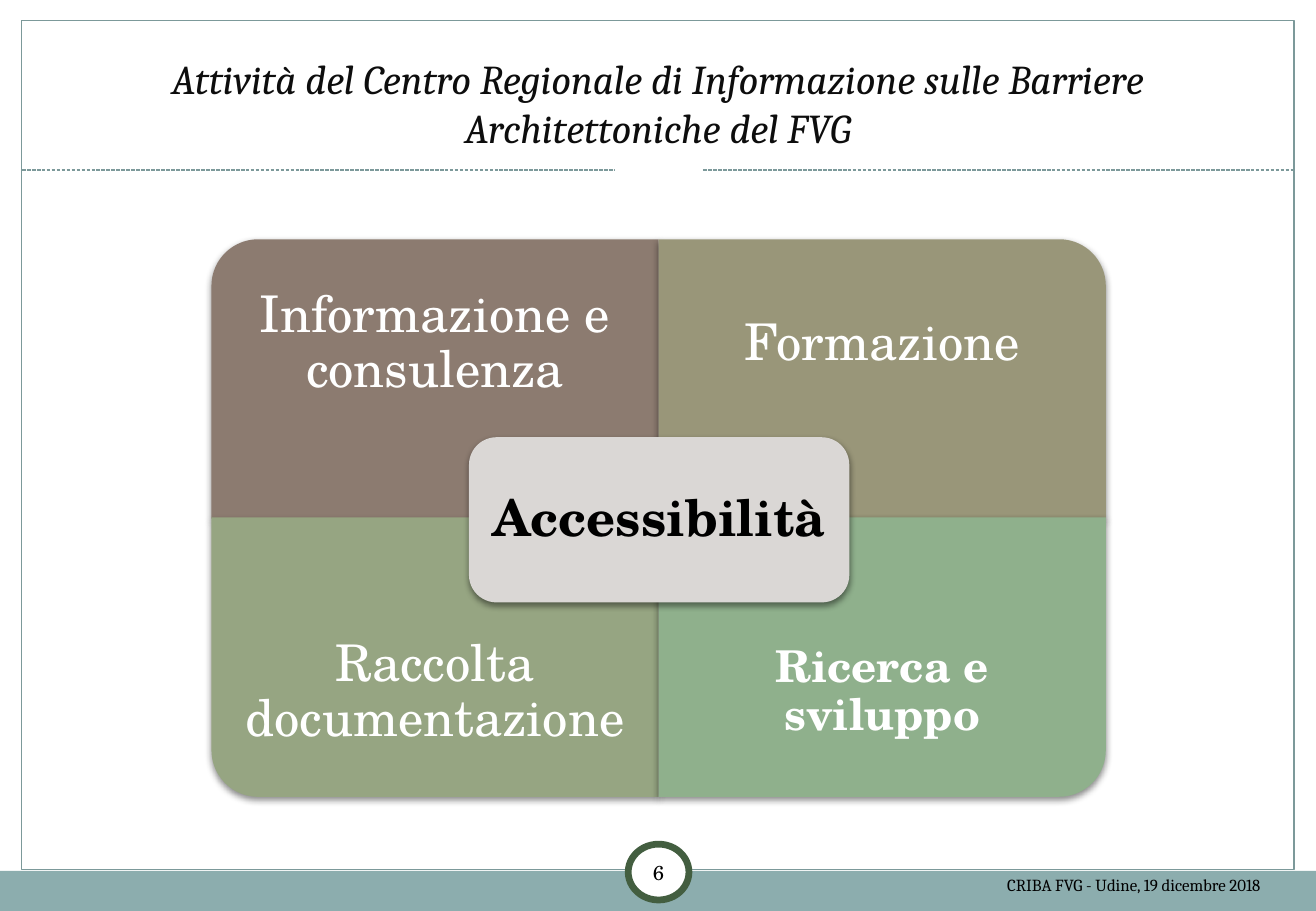
from lxml import etree
from pptx import Presentation
from pptx.dml.color import RGBColor
from pptx.enum.dml import MSO_LINE
from pptx.enum.shapes import MSO_CONNECTOR, MSO_SHAPE
from pptx.enum.text import MSO_ANCHOR, PP_ALIGN
from pptx.oxml import parse_xml
from pptx.oxml.ns import nsdecls, qn
from pptx.util import Pt

PX = 9144  # 100 px to the inch
RECT, OVAL = MSO_SHAPE.RECTANGLE, MSO_SHAPE.OVAL
ROUNDED, ONE_CORNER = MSO_SHAPE.ROUNDED_RECTANGLE, MSO_SHAPE.ROUND_1_RECTANGLE
LEFT_TO_RIGHT = MSO_CONNECTOR.STRAIGHT
DASH = MSO_LINE.SQUARE_DOT
MIDDLE, BOTTOM = MSO_ANCHOR.MIDDLE, MSO_ANCHOR.BOTTOM
CENTER, RIGHT = PP_ALIGN.CENTER, PP_ALIGN.RIGHT

THEME = {
    "white": "FFFFFF", "black": "000000", "title": "0D0D0D",
    "band": "8CADAE", "frame": "7C999A", "badge": "435E40",
    "brown": "8C7B70", "olive": "999679", "moss": "96A582", "green": "8FB08C",
    "center": "DAD7D5",
    "serif": "Cambria", "school": "TeX Gyre Schola",
    "title_size": 24.3, "large": 30, "medium": 26, "number": 12, "footer": 10,
}


def color(name):
    return RGBColor.from_string(THEME[name])


def add_panel(kind, box, fill=None, line=None, width=0.75, shadow=False):
    shape = slide.shapes.add_shape(kind, *(value * PX for value in box))
    shape.shadow.inherit = False
    if fill:
        shape.fill.solid()
        shape.fill.fore_color.rgb = color(fill)
    else:
        shape.fill.background()
    if line:
        shape.line.color.rgb = color(line)
        shape.line.width = Pt(width)
    else:
        shape.line.fill.background()
    if shadow:
        effects = shape.element.spPr.find(qn("a:effectLst"))
        effects.append(parse_xml(
            f'<a:outerShdw {nsdecls("a")} blurRad="50800" dist="25400" dir="5400000" '
            'rotWithShape="0"><a:srgbClr val="000000"><a:alpha val="45000"/>'
            '</a:srgbClr></a:outerShdw>'))
    return shape


def add_text(text, box, size, face="school", ink="black", bold=False, italic=False,
             align=CENTER, anchor=MIDDLE, insets=(10, 5), spacing=None):
    frame = slide.shapes.add_textbox(*(value * PX for value in box)).text_frame
    frame.word_wrap = True
    frame.vertical_anchor = anchor
    frame.margin_left = frame.margin_right = insets[0] * PX
    frame.margin_top = frame.margin_bottom = insets[1] * PX
    paragraph = frame.paragraphs[0]
    paragraph.text = text
    paragraph.alignment = align
    paragraph.line_spacing = spacing
    font = paragraph.font
    font.name, font.size = THEME[face], Pt(THEME[size])
    font.bold, font.italic = bold, italic
    font.color.rgb = color(ink)


presentation = Presentation()
presentation.slide_width, presentation.slide_height = 1083 * PX, 750 * PX
slide = presentation.slides.add_slide(presentation.slide_layouts[6])

# Footer band and page frame
add_panel(RECT, (0, 717, 1083, 33), "band")
add_panel(RECT, (18, 17, 1047, 699), line="frame")

# Dashed rule with a gap in the middle
rule = slide.shapes.add_connector(LEFT_TO_RIGHT, 18 * PX, 140 * PX, 1065 * PX, 140 * PX)
rule.line.color.rgb = color("frame")
rule.line.width = Pt(0.75)
rule.line.dash_style = DASH
etree.SubElement(rule.element.spPr, qn("a:effectLst"))
add_panel(OVAL, (506, 105, 72, 67), "white")

# Title
add_text("Attività del Centro Regionale di Informazione sulle Barriere "
         "Architettoniche del FVG", (36, 36, 1011, 94), "title_size", "serif", "title",
         italic=True, anchor=BOTTOM)

# Four quadrants, each with its rounded corner outwards
LEFT, TOP, WIDTH, HEIGHT, ROW_STEP, TEXT_HEIGHT = 174, 197, 368, 230, 229, 172
quadrants = [
    ("Informazione e consulenza", "brown", 270, "large", False, 23),
    ("Formazione", "olive", 0, "large", False, 23),
    ("Raccolta documentazione", "moss", 180, "large", False, 23),
    ("Ricerca e sviluppo", "green", 90, "medium", True, 20),
]
for index, (label, fill, rotation, size, bold, inset) in enumerate(quadrants):
    row, column = divmod(index, 2)
    left, top = LEFT + column * WIDTH, TOP + row * ROW_STEP
    box = (left, top, WIDTH, HEIGHT)
    if rotation % 180:  # a quarter turn swaps the sides around the same centre
        shift = (WIDTH - HEIGHT) // 2
        box = (left + shift, top - shift, HEIGHT, WIDTH)
    add_panel(ONE_CORNER, box, fill, shadow=True).rotation = rotation
    text_top = top + row * (HEIGHT - TEXT_HEIGHT)
    add_text(label, (left, text_top, WIDTH, TEXT_HEIGHT), size, ink="white", bold=bold,
             insets=(inset, inset), spacing=0.9)

# Central theme
add_panel(ROUNDED, (386, 360, 313, 136), "center", shadow=True)
add_text("Accessibilità", (393, 367, 299, 122), "large", bold=True,
         insets=(12, 12), spacing=0.9)

# Slide number badge and footer
add_panel(OVAL, (517, 695, 50, 46), "white", "badge", 4)
add_text("6", (515, 694, 54, 48), "number", insets=(5, 5))
add_text("CRIBA FVG - Udine, 19 dicembre 2018", (686, 714, 361, 28), "footer", "serif",
         align=RIGHT, anchor=BOTTOM)

presentation.save("out.pptx")
